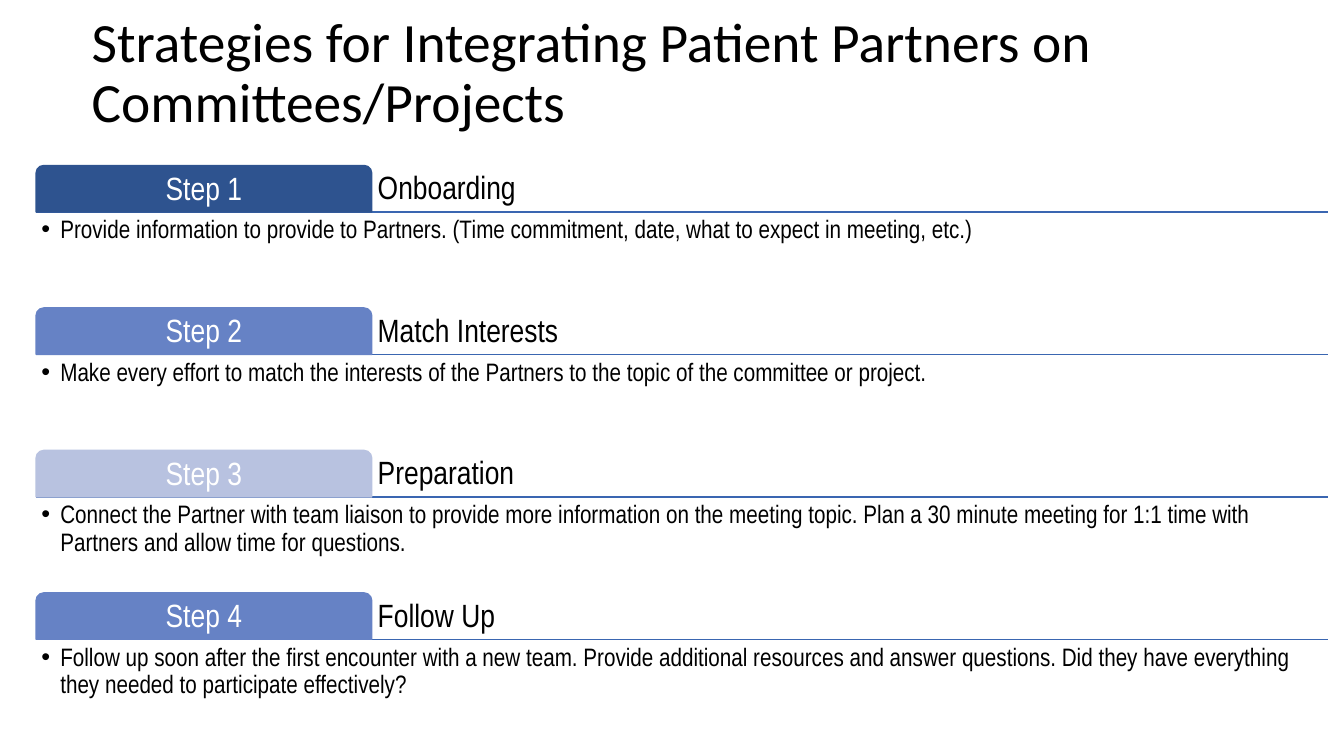
import pptx
import pptx.util
import pptx.dml.color
import pptx.enum.shapes
import pptx.enum.text
import pptx.oxml.ns
import lxml.etree

Cm = pptx.util.Cm
Pt = pptx.util.Pt
RGB = pptx.dml.color.RGBColor
Align = pptx.enum.text.PP_ALIGN
Anchor = pptx.enum.text.MSO_ANCHOR

BLACK = RGB(0x00, 0x00, 0x00)
WHITE = RGB(0xFF, 0xFF, 0xFF)
RULE = RGB(0x3A, 0x66, 0xB1)
NAVY = RGB(0x2E, 0x53, 0x8F)
BLUE = RGB(0x66, 0x82, 0xC5)
PALE = RGB(0xB8, 0xC2, 0xE0)

TITLE = "Strategies for Integrating Patient Partners on Committees/Projects"
STEPS = [
    ("Onboarding", NAVY,
     "Provide information to provide to Partners. (Time commitment, date, "
     "what to expect in meeting, etc.)"),
    ("Match Interests", BLUE,
     "Make every effort to match the interests of the Partners to the topic "
     "of the committee or project."),
    ("Preparation", PALE,
     "Connect the Partner with team liaison to provide more information on "
     "the meeting topic. Plan a 30 minute meeting for 1:1 time with Partners "
     "and allow time for questions."),
    ("Follow Up", BLUE,
     "Follow up soon after the first encounter with a new team. Provide "
     "additional resources and answer questions. Did they have everything "
     "they needed to participate effectively?"),
]

# Step grid, in centimetres
LEFT, TOP, PITCH = 0.91, 4.17, 3.59
WIDTH, TAB, HEAD, BODY = 32.56, 8.46, 1.17, 2.36


def place(shape, left, top, width, height):
    shape.left, shape.top = Cm(left), Cm(top)
    shape.width, shape.height = Cm(width), Cm(height)


def write(shape, text, size, color=BLACK, font="Arial Narrow",
          align=Align.LEFT, anchor=Anchor.MIDDLE, inset=0.13):
    frame = shape.text_frame
    frame.text = text
    frame.word_wrap = True
    frame.auto_size = pptx.enum.text.MSO_AUTO_SIZE.NONE
    frame.vertical_anchor = anchor
    frame.margin_left = frame.margin_right = Cm(inset)
    frame.margin_top = frame.margin_bottom = Cm(0.13)
    para = frame.paragraphs[0]
    para.alignment = align
    para.line_spacing = 0.9
    para.space_before = Pt(0)
    face = para.runs[0].font
    face.name, face.size, face.bold = font, Pt(size), False
    face.color.rgb = color
    return para


def add_mark(para):
    """Give a paragraph a round bullet with a hanging indent."""
    props = para._p.get_or_add_pPr()
    props.set("marL", str(Cm(0.48)))
    props.set("indent", str(-Cm(0.48)))
    for tag in ("a:buNone", "a:buChar"):
        for old in props.findall(pptx.oxml.ns.qn(tag)):
            props.remove(old)
    qn = pptx.oxml.ns.qn
    tint = lxml.etree.SubElement(props, qn("a:buClr"))
    lxml.etree.SubElement(tint, qn("a:srgbClr"), val=str(BLACK))
    lxml.etree.SubElement(props, qn("a:buFont"), typeface="Arial")
    lxml.etree.SubElement(props, qn("a:buChar"), char="•")


def add_rule(slide, top):
    line = slide.shapes.add_connector(
        pptx.enum.shapes.MSO_CONNECTOR.STRAIGHT,
        Cm(LEFT), Cm(top), Cm(LEFT + WIDTH), Cm(top))
    line.line.color.rgb = RULE
    line.line.width = Pt(1)
    lxml.etree.SubElement(line._element.spPr,
                          pptx.oxml.ns.qn("a:effectLst"))


def add_tab(slide, top, text, color):
    tab = slide.shapes.add_shape(
        pptx.enum.shapes.MSO_SHAPE.ROUND_2_SAME_RECTANGLE,
        Cm(LEFT), Cm(top), Cm(TAB), Cm(HEAD))
    tab.adjustments[0], tab.adjustments[1] = 0.167, 0
    tab.shadow.inherit = False
    tab.fill.solid()
    tab.fill.fore_color.rgb = color
    tab.line.color.rgb = color
    tab.line.width = Pt(1)
    write(tab, text, 23, WHITE, align=Align.CENTER)


def add_head(slide, top, text):
    left = LEFT + TAB + 0.02
    box = slide.shapes.add_textbox(
        Cm(left), Cm(top), Cm(LEFT + WIDTH - left), Cm(HEAD))
    write(box, text, 23, anchor=Anchor.BOTTOM)


def fill_list(holder, top, text):
    place(holder, LEFT, top, WIDTH, BODY)
    add_mark(write(holder, text, 18, anchor=Anchor.TOP))


def main():
    deck = pptx.Presentation()
    deck.slide_width, deck.slide_height = Cm(33.87), Cm(19.05)
    # The comparison layout has a title and four body placeholders
    slide = deck.slides.add_slide(deck.slide_layouts[4])
    title, *lists = slide.placeholders

    # Title
    place(title, 2.06, 0.28, 27.94, 3.18)
    write(title, TITLE, 39.6, font="Calibri", inset=0.25)

    # Steps
    for i, (name, color, text) in enumerate(STEPS):
        top = TOP + i * PITCH
        add_rule(slide, top + HEAD)
        add_tab(slide, top, f"Step {i + 1}", color)
        add_head(slide, top, name)
        fill_list(lists[i], top + HEAD, text)

    deck.save("out.pptx")


if __name__ == "__main__":
    main()
